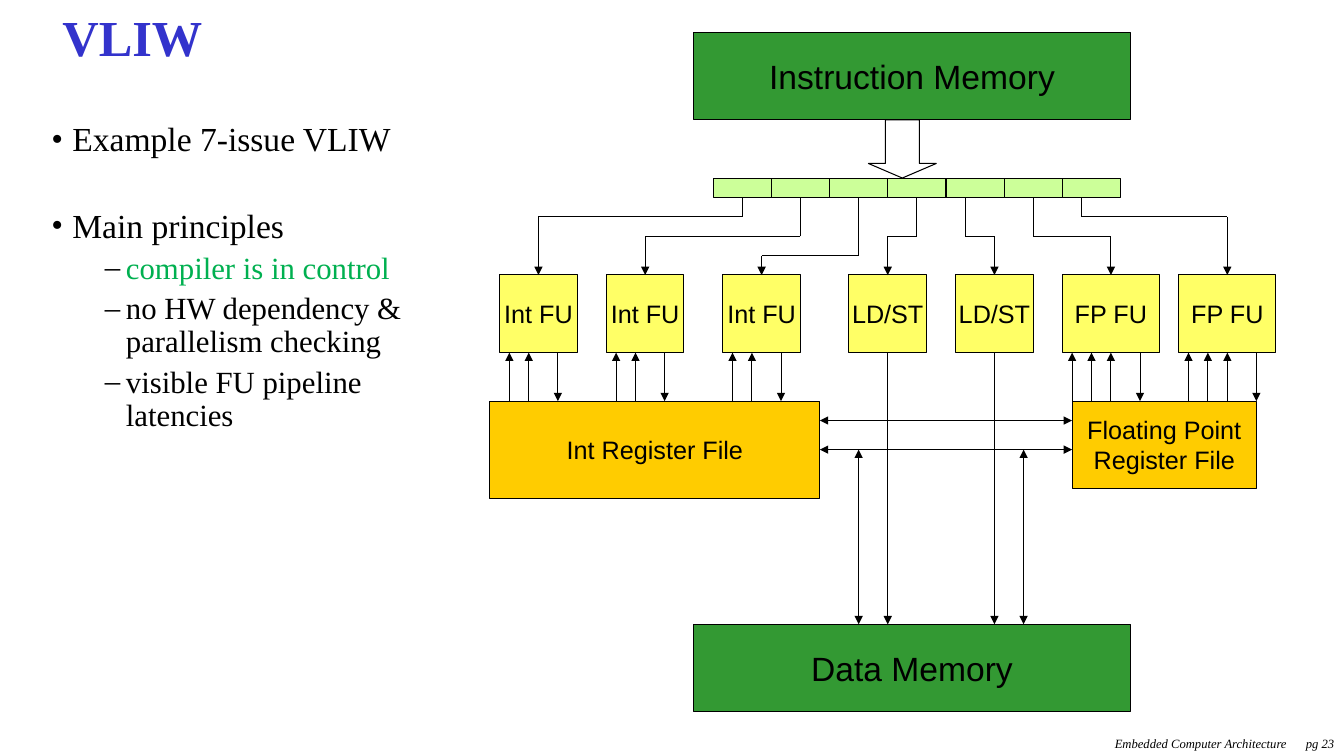
from dataclasses import dataclass

from lxml import etree
from pptx import Presentation
from pptx.dml.color import RGBColor
from pptx.enum.shapes import MSO_CONNECTOR, MSO_SHAPE
from pptx.enum.text import MSO_ANCHOR, PP_ALIGN
from pptx.oxml.ns import qn
from pptx.util import Pt

RECT, DOWN_ARROW = MSO_SHAPE.RECTANGLE, MSO_SHAPE.DOWN_ARROW
STRAIGHT = MSO_CONNECTOR.STRAIGHT
TOP, MIDDLE = MSO_ANCHOR.TOP, MSO_ANCHOR.MIDDLE
CENTER = PP_ALIGN.CENTER


@dataclass(frozen=True)
class Theme:
    serif: str = "Times New Roman"
    sans: str = "Arial"
    black: str = "000000"
    title: str = "3333CC"
    accent: str = "00B050"
    memory: str = "339933"
    register: str = "FFCC00"
    unit: str = "FFFF66"
    slot: str = "CCFF99"
    title_size: int = 36
    large: int = 24
    sub: int = 22
    label: int = 18
    footer: int = 9
    line: float = 0.75
    grid: float = 6.93
    left: float = 350
    top: float = 23.2


class Deck:
    def __init__(self, prs, theme):
        self.t = theme
        self.s = prs.slides.add_slide(prs.slide_layouts[6])
        self.sites = {}

    def point(self, x, y):
        t = self.t
        return Pt(t.left + x * t.grid), Pt(t.top + y * t.grid)

    def size(self, w, h):
        return Pt(w * self.t.grid), Pt(h * self.t.grid)

    def run(self, p, text, font, size, color, bold=False, italic=False):
        r = p.add_run()
        r.text = text
        r.font.name, r.font.size = font, Pt(size)
        r.font.bold, r.font.italic = bold, italic
        r.font.color.rgb = RGBColor.from_string(color)

    def text_frame(self, x, y, w, h, anchor=TOP):
        tf = self.s.shapes.add_textbox(Pt(x), Pt(y), Pt(w), Pt(h)).text_frame
        tf.word_wrap = True
        tf.vertical_anchor = anchor
        tf.margin_left = tf.margin_right = tf.margin_top = tf.margin_bottom = 0
        return tf

    def bullet(self, p, lines, char, indent, size, color, before):
        p.line_spacing, p.space_before = 0.9, Pt(before)
        pPr = p._p.get_or_add_pPr()
        pPr.set("marL", str(Pt(indent)))
        pPr.set("indent", str(-Pt(15)))
        clr = etree.SubElement(pPr, qn("a:buClr"))
        etree.SubElement(clr, qn("a:srgbClr"), val=self.t.black)
        etree.SubElement(pPr, qn("a:buFont"), typeface=self.t.serif)
        etree.SubElement(pPr, qn("a:buChar"), char=char)
        for i, line in enumerate(lines):
            if i:
                p.add_line_break()
            self.run(p, line, self.t.serif, size, color)

    def shape(self, kind, x, y, w, h, fill=None):
        sp = self.s.shapes.add_shape(kind, *self.point(x, y), *self.size(w, h))
        sp.shadow.inherit = False
        sp.line.color.rgb = RGBColor.from_string(self.t.black)
        sp.line.width = Pt(self.t.line)
        if fill:
            sp.fill.solid()
            sp.fill.fore_color.rgb = RGBColor.from_string(fill)
        else:
            sp.fill.background()
        return sp

    def box(self, x, y, w, h, fill, lines=(), size=None):
        sp = self.shape(RECT, x, y, w, h, fill)
        middles = ((x + w / 2, y), (x, y + h / 2),
                   (x + w / 2, y + h), (x + w, y + h / 2))
        for i, middle in enumerate(middles):
            self.sites[middle] = sp, i
        tf = sp.text_frame
        tf.word_wrap = False
        tf.vertical_anchor = MIDDLE
        for i, line in enumerate(lines):
            p = tf.add_paragraph() if i else tf.paragraphs[0]
            p.alignment = CENTER
            self.run(p, line, self.t.sans, size or self.t.label, self.t.black)

    def wire(self, start, end, head=False, tail=False):
        cx = self.s.shapes.add_connector(
            STRAIGHT, *self.point(*start), *self.point(*end))
        if start in self.sites:
            cx.begin_connect(*self.sites[start])
        if end in self.sites:
            cx.end_connect(*self.sites[end])
        cx.line.color.rgb = RGBColor.from_string(self.t.black)
        cx.line.width = Pt(self.t.line)
        ln = cx.line._get_or_add_ln()
        for tag, shown in (("a:headEnd", head), ("a:tailEnd", tail)):
            if shown:
                etree.SubElement(ln, qn(tag), type="triangle")
        etree.SubElement(cx._element.spPr, qn("a:effectLst"))


def draw_text(d):
    t = d.t
    p = d.text_frame(44.6, 0, 870, 60, MIDDLE).paragraphs[0]
    p.line_spacing = 0.8
    d.run(p, "VLIW", t.serif, t.title_size, t.title, bold=True)

    tf = d.text_frame(36.7, 87.8, 288, 420)
    outer, inner = ("•", 15, t.large), ("–", 53.3, t.sub)
    items = (
        (["Example 7-issue VLIW"], *outer, t.black, 0),
        (["Main principles"], *outer, t.black, 36),
        (["compiler is in control"], *inner, t.accent, 5),
        (["no HW dependency & parallelism checking"], *inner, t.black, 5),
        (["visible FU pipeline", "latencies"], *inner, t.black, 5),
    )
    for i, item in enumerate(items):
        d.bullet(tf.add_paragraph() if i else tf.paragraphs[0], *item)

    p = d.text_frame(796.3, 525.6, 163.7, 14).paragraphs[0]
    tabs = etree.SubElement(p._p.get_or_add_pPr(), qn("a:tabLst"))
    etree.SubElement(tabs, qn("a:tab"), pos=str(Pt(136.4)), algn="l")
    d.run(p, "Embedded Computer Architecture\tpg 23", t.serif, t.footer,
          t.black, italic=True)


def draw_datapath(d):
    t = d.t
    slot_y, fu_y, reg_y, data_y = 15, 25, 38, 61
    fu_h = 8
    fu_bottom = fu_y + fu_h
    d.box(21, 0, 45, 9, t.memory, ["Instruction Memory"], t.large)
    d.box(21, data_y, 45, 9, t.memory, ["Data Memory"], t.large)
    d.box(0, reg_y, 34, 10, t.register, ["Int Register File"])
    d.box(60, reg_y, 19, 9, t.register, ["Floating Point", "Register File"])
    for i in range(7):
        d.box(23 + 6 * i, slot_y, 6, 2, t.slot)
    arrow = d.shape(DOWN_ARROW, 39, 9, 7, 6)
    arrow.adjustments[0], arrow.adjustments[1] = 0.5, 0.25

    ports = {"Int FU": ((1, 3), 6), "LD/ST": ((), None), "FP FU": ((1, 3, 5), 8)}
    units = (
        ("Int FU", 1, 8, 26, 19),
        ("Int FU", 12, 8, 32, 21),
        ("Int FU", 24, 8, 38, 23),
        ("LD/ST", 37, 8, 44, 21),
        ("LD/ST", 48, 8, 49, 21),
        ("FP FU", 59, 10, 56, 21),
        ("FP FU", 71, 10, 61, 19),
    )
    for name, x, w, tap, bend in units:
        d.box(x, fu_y, w, fu_h, t.unit, [name])
        mid = x + w / 2
        d.wire((tap, slot_y + 2), (tap, bend))
        d.wire((tap, bend), (mid, bend))
        d.wire((mid, bend), (mid, fu_y), tail=True)
        reads, write = ports[name]
        for port in reads:
            d.wire((x + port, reg_y), (x + port, fu_bottom), tail=True)
        if write:
            d.wire((x + write, fu_bottom), (x + write, reg_y), tail=True)
        else:
            d.wire((mid, fu_bottom), (mid, data_y), tail=True)

    for y in (40, 43):
        d.wire((34, y), (60, y), head=True, tail=True)
    for x in (38, 55):
        d.wire((x, 43), (x, data_y), head=True, tail=True)


def main():
    prs = Presentation()
    prs.slide_width, prs.slide_height = Pt(960), Pt(540)
    d = Deck(prs, Theme())
    draw_text(d)
    draw_datapath(d)
    prs.save("out.pptx")


if __name__ == "__main__":
    main()
